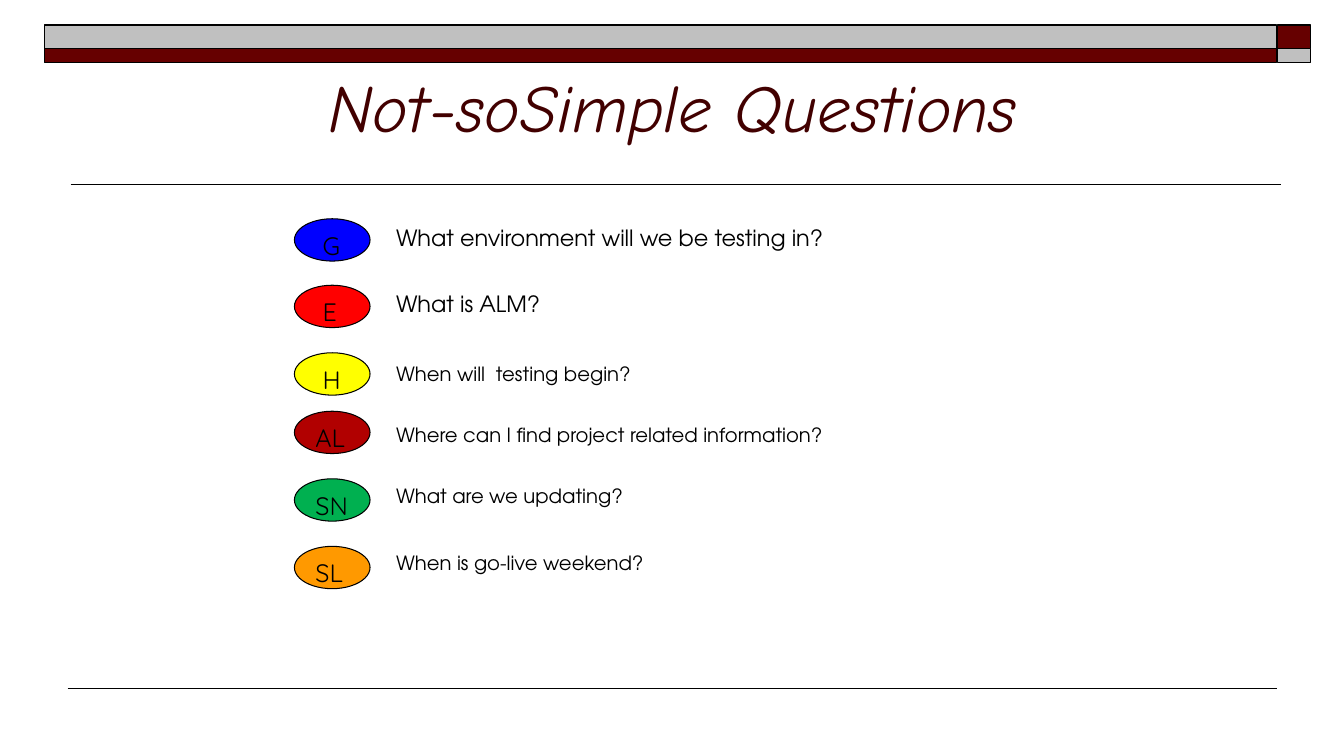
from lxml import etree
from pptx import Presentation
from pptx.dml.color import RGBColor
from pptx.enum.shapes import MSO_CONNECTOR, MSO_SHAPE
from pptx.enum.text import MSO_ANCHOR, MSO_AUTO_SIZE, PP_ALIGN
from pptx.oxml.ns import qn
from pptx.util import Emu, Pt

PX = 9144  # EMU per px, 100 px to the inch
THEME = {
    "ink": "000000", "maroon": "660000", "silver": "C0C0C0",
    "title": {"name": "Comic Neue", "size": 48, "italic": True, "color": "420000"},
    "badge": {"name": "Quicksand", "size": 18, "color": "000000"},
    "large": {"name": "TeX Gyre Adventor", "size": 16, "color": "000000"},
    "small": {"name": "TeX Gyre Adventor", "size": 14, "color": "000000"},
}


def write(frame, text, style, **form):
    """Fill a text frame with one paragraph in a theme style."""
    form = {"word_wrap": True, "auto_size": MSO_AUTO_SIZE.NONE,
            "vertical_anchor": MSO_ANCHOR.TOP, **form}
    for key, value in form.items():
        setattr(frame, key, value)
    para = frame.paragraphs[0]
    para.alignment = PP_ALIGN.LEFT
    run = para.add_run()
    run.text = text
    for key, value in THEME[style].items():
        if key == "color":
            run.font.color.rgb = RGBColor.from_string(value)
        else:
            setattr(run.font, key, Pt(value) if key == "size" else value)
    return para


def draw(kind, box, fill, width):
    """Add a filled shape with a thin dark outline."""
    shape = slide.shapes.add_shape(kind, *[Emu(n * PX) for n in box])
    shape.shadow.inherit = False
    shape.fill.solid()
    shape.fill.fore_color.rgb = RGBColor.from_string(fill)
    shape.line.color.rgb = RGBColor.from_string(THEME["ink"])
    shape.line.width = Pt(width)
    return shape


deck = Presentation()
deck.slide_width, deck.slide_height = Emu(1333 * PX), Emu(750 * PX)
slide = deck.slides.add_slide(deck.slide_layouts[5])

# Header band and rules
for left, width, colors in [(44, 1222, ("silver", "maroon")),
                            (1267, 33, ("maroon", "silver"))]:
    for top, height, color in zip((25, 48), (23, 14), colors):
        draw(MSO_SHAPE.RECTANGLE, (left, top, width, height), THEME[color], 1)

for left, right, top, weight in [(70, 1271, 183, 1), (67, 1267, 683, 0.75)]:
    ends = [Emu(n * PX) for n in (left, top, right, top)]
    rule = slide.shapes.add_connector(MSO_CONNECTOR.STRAIGHT, *ends)
    rule.line.color.rgb = RGBColor.from_string(THEME["ink"])
    rule.line.width = Pt(weight)
    etree.SubElement(rule._element.spPr, qn("a:effectLst"))

# Title
title = slide.shapes.title
for key, value in {"left": 217, "top": 25, "width": 900, "height": 125}.items():
    setattr(title, key, Emu(value * PX))
para = write(title.text_frame, "Not-soSimple Questions", "title",
             vertical_anchor=MSO_ANCHOR.BOTTOM)
para.alignment = PP_ALIGN.CENTER

# Questions: badge, color, badge top, text, text top, text width, style
rows = [
    ("G", "0000FF", 217, "What environment will we be testing in?", 217, 617, "large"),
    ("E", "FF0000", 283, "What is ALM?", 283, 483, "large"),
    ("H", "FFFF00", 350, "When will  testing begin?", 354, 517, "small"),
    ("AL", "B10000", 408, "Where can I find project related information?", 415, 708, "small"),
    ("SN", "00B050", 475, "What are we updating?", 475, 650, "small"),
    ("SL", "FF9900", 542, "When is go-live weekend?", 542, 717, "small"),
]
for mark, color, top, text, line, width, style in rows:
    badge = draw(MSO_SHAPE.OVAL, (292, top, 75, 42), color, 0.75)
    inset = 17 if len(mark) == 1 else 10
    write(badge.text_frame, mark, "badge", margin_left=Emu(inset * PX))
    height = 37 if style == "large" else 34
    box = slide.shapes.add_textbox(*[Emu(n * PX) for n in (383, line, width, height)])
    write(box.text_frame, text, style, auto_size=MSO_AUTO_SIZE.SHAPE_TO_FIT_TEXT)

deck.save("out.pptx")
